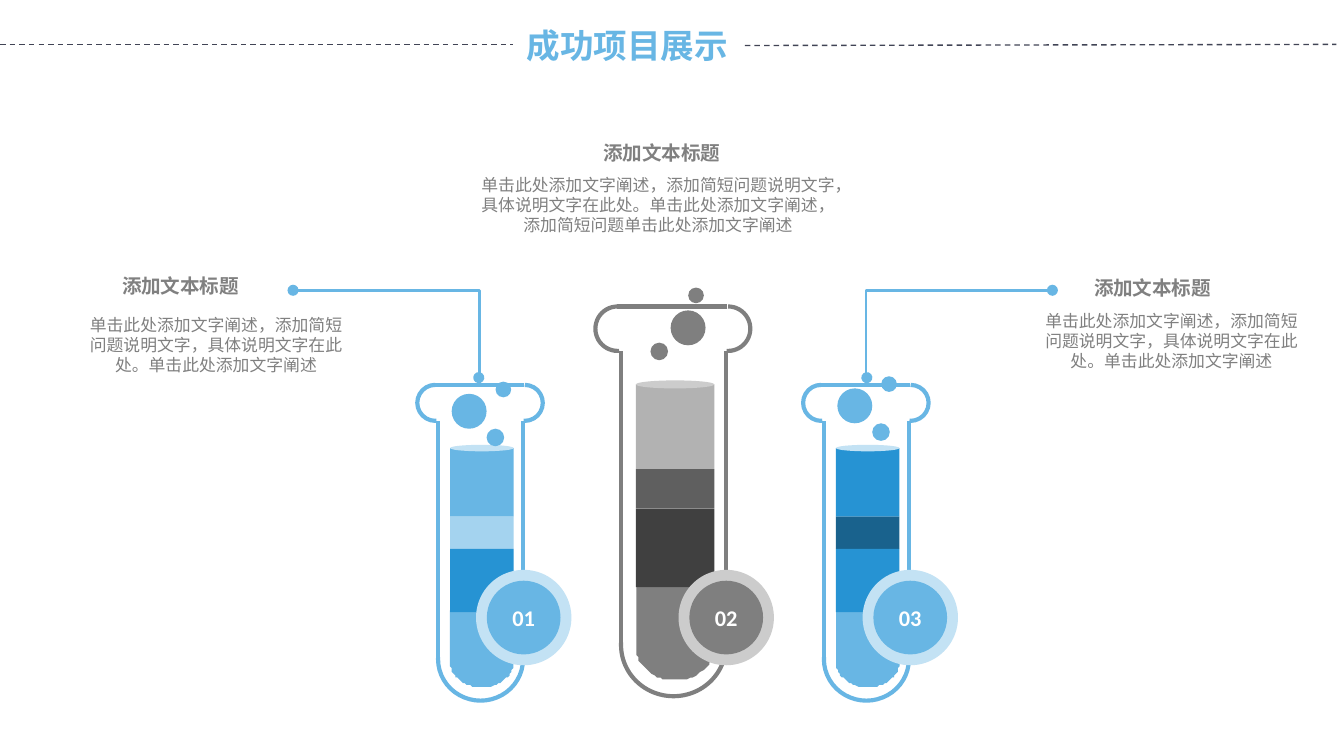
"""Build the three-test-tube project showcase slide."""
from dataclasses import dataclass
from math import cos, pi, sin

from lxml import etree
from pptx import Presentation
from pptx.dml.color import RGBColor
from pptx.enum import dml, shapes, text
from pptx.oxml.ns import qn
from pptx.util import Pt

COLOURS = {
    "rule": "414455", "blue": "68B6E4", "pale": "C3E2F4", "sky": "A4D3EF",
    "strong": "2693D3", "navy": "19628D", "grey": "7F7F7F", "silver": "CCCCCC",
    "ash": "B2B2B2", "slate": "5F5F5F", "coal": "404040", "copy": "808080",
    "white": "FFFFFF",
}
CJK = "Noto Sans CJK SC"
HEADING = "添加文本标题"
SUMMARY = "单击此处添加文字阐述，添加简短问题说明文字，具体说明文字在此处。单击此处添加文字阐述"
LIQUID_WIDTH = 42.1
OVAL = shapes.MSO_SHAPE.OVAL
SIDE_BUBBLES = ((18.7, 18.7), (23.5, -6.5))
MIDDLE_BUBBLES = ((-10.8, 17.3), (9.4, -12.2))


@dataclass(frozen=True)
class Tube:
    number: str
    left: float
    top: float
    scale: float
    glass: str
    rim: str
    layers: tuple[str, str, str, str]
    badge_left: float
    bubble: tuple[float, float]
    small_bubbles: tuple[tuple[float, float], ...]


@dataclass(frozen=True)
class Caption:
    heading_at: tuple[float, float]
    body_at: tuple[float, float]
    body_width: float
    body: str


TUBES = (
    Tube("02", 340.6, 203.8, 1, "grey", "silver", ("ash", "slate", "coal", "grey"),
         363.5, (359.3, 166.3), MIDDLE_BUBBLES),
    Tube("03", 447.8, 238.3, 0.81, "blue", "pale", ("strong", "navy", "strong", "blue"),
         462.1, (448.6, 208.1), SIDE_BUBBLES),
    Tube("01", 241.1, 238.3, 0.81, "blue", "pale", ("blue", "sky", "strong", "blue"),
         255, (242, 211), SIDE_BUBBLES),
)
CAPTIONS = (
    Caption((65.4, 146.9), (45.4, 168.5), 140.4, SUMMARY),
    Caption((586.1, 147.6), (558.7, 166.3), 137.5, SUMMARY),
    Caption((323.3, 75.6), (257, 93.6), 190.8, SUMMARY + "，添加简短问题单击此处添加文字阐述"),
)


def rgb(name: str) -> RGBColor:
    """Return the named colour."""
    return RGBColor.from_string(COLOURS[name])


def paint(shape, colour: str):
    """Fill a shape flatly, without outline or shadow."""
    shape.shadow.inherit = False
    shape.fill.solid()
    shape.fill.fore_color.rgb = rgb(colour)
    shape.line.fill.background()
    return shape


def add_solid(slide, kind, left: float, top: float, width: float, height: float, colour: str):
    """Add a flat preset shape."""
    return paint(slide.shapes.add_shape(kind, Pt(left), Pt(top), Pt(width), Pt(height)), colour)


def add_line(slide, start, end, colour: str, weight: float,
             kind=shapes.MSO_CONNECTOR.STRAIGHT):
    """Add a connector without shadow."""
    line = slide.shapes.add_connector(kind, *(Pt(v) for v in (*start, *end)))
    line.line.color.rgb = rgb(colour)
    line.line.width = Pt(weight)
    etree.SubElement(line._element.spPr, qn("a:effectLst"))
    return line


def add_lead(slide, start, end) -> None:
    """Add an elbow lead with round ends that turns above its end."""
    lead = add_line(slide, start, end, "blue", 1.5, shapes.MSO_CONNECTOR.ELBOW)
    for end_name in ("headEnd", "tailEnd"):
        etree.SubElement(lead.line._get_or_add_ln(), qn(f"a:{end_name}"), type="oval")
    geometry = lead._element.spPr.find(qn("a:prstGeom"))
    guides = geometry.find(qn("a:avLst"))
    if guides is None:
        guides = etree.SubElement(geometry, qn("a:avLst"))
    etree.SubElement(guides, qn("a:gd"), name="adj1", fmla="val 100400")


def style(paragraph, size: float, colour: str, bold: bool, face: str = CJK) -> None:
    """Set the font of a whole paragraph."""
    font = paragraph.font
    font.size, font.bold, font.name = Pt(size), bold, face
    font.color.rgb = rgb(colour)
    etree.SubElement(font._element, qn("a:ea"), typeface=face)


def add_copy(slide, at, width: float, words: str, size: float, colour: str,
             bold: bool = True, wrap: bool = False, lines: int = 1,
             inset: tuple[float, float] = (0, 0)) -> None:
    """Add a text box with fixed line pitch."""
    pitch = size * 1.2
    box = slide.shapes.add_textbox(
        Pt(at[0]), Pt(at[1]), Pt(width), Pt(pitch * lines + 2 * inset[1]))
    frame = box.text_frame
    frame.word_wrap = wrap
    frame.margin_left = frame.margin_right = Pt(inset[0])
    frame.margin_top = frame.margin_bottom = Pt(inset[1])
    paragraph = frame.paragraphs[0]
    paragraph.text = words
    paragraph.line_spacing = Pt(pitch)
    paragraph.alignment = text.PP_ALIGN.CENTER if wrap else text.PP_ALIGN.LEFT
    style(paragraph, size, colour, bold)


def add_tube(slide, tube: Tube) -> None:
    """Draw the liquid layers and the glass of a tube."""
    def place(x: float, y: float) -> tuple[float, float]:
        return tube.left + x * tube.scale, tube.top + y * tube.scale

    def solid(kind, y: float, height: float, colour: str) -> None:
        add_solid(slide, kind, *place(0, y), LIQUID_WIDTH * tube.scale,
                  height * tube.scale, colour)

    radius = LIQUID_WIDTH / 2
    bowl = [place(radius + radius * cos(pi * i / 40), 143.3 + 17.3 * sin(pi * i / 40))
            for i in range(41)]
    builder = slide.shapes.build_freeform(*place(LIQUID_WIDTH, 109.4), scale=Pt(1))
    builder.add_line_segments([*bowl, place(0, 109.4)])
    paint(builder.convert_to_shape(), tube.layers[3])
    for y, height, colour in zip((2.2, 47.5, 68.8), (45.4, 21.3, 42), tube.layers):
        solid(shapes.MSO_SHAPE.RECTANGLE, y, height, colour)
    solid(OVAL, 0, 4.3, tube.rim)

    for x, y, width, height, start, end in (
            (-7.9, 114.5, 56.2, 54.7, 0, 183),
            (37.6, -39.6, 23.8, 23.8, 270, 93.66),
            (-21.6, -39.6, 23.8, 23.8, 86.34, 270)):
        arc = slide.shapes.add_shape(
            shapes.MSO_SHAPE.ARC, *(Pt(v) for v in place(x, y)),
            Pt(width * tube.scale), Pt(height * tube.scale))
        arc.adjustments[0], arc.adjustments[1] = start * 0.6, end * 0.6
        arc.shadow.inherit = False
        arc.fill.background()
        arc.line.color.rgb = rgb(tube.glass)
        arc.line.width = Pt(2.25)
    for start, end in (((-7.9, 141.5), (-7.9, -15.8)), ((48.3, 142.2), (48.3, -15.8)),
                       ((49, -39.6), (-10.1, -39.6))):
        add_line(slide, place(*start), place(*end), tube.glass, 2.25)


def add_badge(slide, tube: Tube) -> None:
    """Draw the numbered badge of a tube."""
    add_solid(slide, OVAL, tube.badge_left, 305.3, 51.1, 51.1, tube.rim)
    disc = add_solid(slide, OVAL, tube.badge_left + 5.8, 311.1, 39.5, 39.5, tube.glass)
    disc.text_frame.vertical_anchor = text.MSO_ANCHOR.MIDDLE
    number = disc.text_frame.paragraphs[0]
    number.text = tube.number
    number.alignment = text.PP_ALIGN.CENTER
    style(number, 12, "white", True, "Calibri")


def add_bubbles(slide, tube: Tube) -> None:
    """Draw the large bubble of a tube and the small ones around it."""
    x, y = tube.bubble
    for (dx, dy), size in zip(((0, 0), *tube.small_bubbles), (18.7, 9.4, 8.4)):
        add_solid(slide, OVAL, x + dx, y + dy, size, size, tube.glass)


def main() -> None:
    """Build and save the slide."""
    deck = Presentation()
    deck.slide_width, deck.slide_height = Pt(720), Pt(405)
    slide = deck.slides.add_slide(deck.slide_layouts[6])
    for start, end in (((0, 23.8), (275, 23.8)), ((399, 24.4), (716, 23.8))):
        add_line(slide, start, end, "rule", 0.75).line.dash_style = dml.MSO_LINE.DASH
    add_copy(slide, (275, 10.1), 123.8, "成功项目展示", 18, "blue", inset=(7.2, 3.6))
    for tube in TUBES:
        add_tube(slide, tube)
    add_lead(slide, (157, 155.5), (256.5, 202.3))
    add_lead(slide, (563.8, 155.5), (464.4, 202.3))
    for caption in CAPTIONS:
        add_copy(slide, caption.heading_at, 63, HEADING, 10.5, "copy")
        add_copy(slide, caption.body_at, caption.body_width, caption.body, 9, "copy",
                 bold=False, wrap=True, lines=3)
    for draw in (add_badge, add_bubbles):
        for tube in TUBES:
            draw(slide, tube)
    deck.save("out.pptx")


if __name__ == "__main__":
    main()
